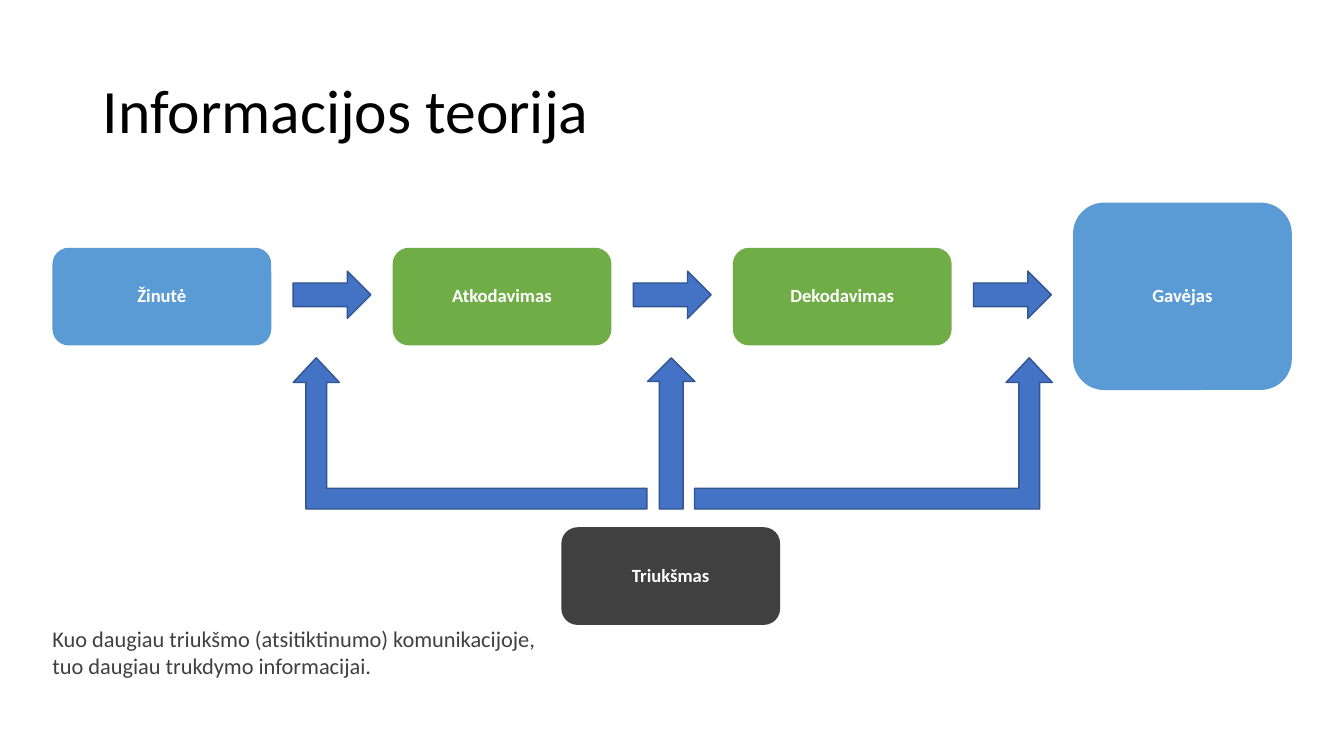
from pptx import Presentation
from pptx.dml.color import RGBColor
from pptx.enum.shapes import MSO_SHAPE
from pptx.enum.text import MSO_ANCHOR, PP_ALIGN
from pptx.util import Pt

ROUNDED = MSO_SHAPE.ROUNDED_RECTANGLE
RIGHT_ARROW = MSO_SHAPE.RIGHT_ARROW
BENT_ARROW = MSO_SHAPE.BENT_UP_ARROW
MIDDLE = MSO_ANCHOR.MIDDLE
CENTER = PP_ALIGN.CENTER

FONT = "Calibri"
BLUE, GREEN, GRAY = "5B9BD5", "70AD47", "404040"
ARROW_FILL, ARROW_LINE = "4472C4", "325491"

# Lengths in points
STEP = 243
BOX_LEFT, BOX_TOP, BOX_WIDTH, BOX_HEIGHT = 37.5, 177, 156.3, 69.8
ARROW_LEFT, ARROW_TOP, ARROW_WIDTH, ARROW_HEIGHT = 209.4, 193.7, 55.6, 33.8
NOISE_TOP, NOISE_HEIGHT = 255.6, 108


def color(code):
    return RGBColor.from_string(code)


def write(shape, text, size, code, bold=False, inset=0, spacing=None):
    frame = shape.text_frame
    frame.word_wrap = True
    frame.margin_left = frame.margin_right = Pt(inset)
    frame.margin_top = frame.margin_bottom = Pt(inset / 2)
    para = frame.paragraphs[0]
    para.text = text
    para.line_spacing = spacing
    para.font.name = FONT
    para.font.size = Pt(size)
    para.font.bold = bold
    para.font.color.rgb = color(code)
    return frame


def add_text(page, text, left, top, width, height, size, code, **style):
    box = page.shapes.add_textbox(Pt(left), Pt(top), Pt(width), Pt(height))
    return write(box, text, size, code, **style)


def add_filled(page, kind, left, top, width, height, fill):
    shape = page.shapes.add_shape(kind, Pt(left), Pt(top), Pt(width), Pt(height))
    shape.shadow.inherit = False
    shape.fill.solid()
    shape.fill.fore_color.rgb = color(fill)
    return shape


def add_box(page, text, left, top, height, fill):
    box = add_filled(page, ROUNDED, left, top, BOX_WIDTH, height, fill)
    box.line.fill.background()
    frame = write(box, text, 13.3, "FFFFFF", bold=True, spacing=0.9)
    frame.vertical_anchor = MIDDLE
    frame.paragraphs[0].alignment = CENTER


def add_arrow(page, kind, left, top, width, height):
    arrow = add_filled(page, kind, left, top, width, height, ARROW_FILL)
    arrow.line.color.rgb = color(ARROW_LINE)
    arrow.line.width = Pt(1)
    return arrow


def add_bent_arrow(page, left, width, flipped=False):
    arrow = add_arrow(page, BENT_ARROW, left, NOISE_TOP, width, NOISE_HEIGHT)
    for index, value in enumerate((0.137, 0.153, 0.163)):
        arrow.adjustments[index] = value
    if flipped:
        arrow._element.spPr.get_or_add_xfrm().set("flipH", "1")


def main():
    deck = Presentation()
    deck.slide_width, deck.slide_height = Pt(960), Pt(540)
    page = deck.slides.add_slide(deck.slide_layouts[6])

    # Title and conclusion
    title = add_text(page, "Informacijos teorija", 66.2, 28.8, 828, 104.4,
                     44, "000000", inset=7.2, spacing=0.9)
    title.vertical_anchor = MIDDLE
    add_text(page, "Kuo daugiau triukšmo (atsitiktinumo) komunikacijoje, "
             "tuo daugiau trukdymo informacijai.",
             37.5, 446.4, 345.6, 58.3, 16, GRAY)

    # Message chain
    chain = [("Žinutė", BLUE), ("Atkodavimas", GREEN), ("Dekodavimas", GREEN)]
    for index, (name, fill) in enumerate(chain):
        shift = index * STEP
        add_box(page, name, BOX_LEFT + shift, BOX_TOP, BOX_HEIGHT, fill)
        add_arrow(page, RIGHT_ARROW, ARROW_LEFT + shift, ARROW_TOP,
                  ARROW_WIDTH, ARROW_HEIGHT)
    add_box(page, "Gavėjas", BOX_LEFT + 3 * STEP, 144.7, 133.9, BLUE)

    # Noise reaching every link
    add_box(page, "Triukšmas", 401, 376.6, BOX_HEIGHT, GRAY)
    add_bent_arrow(page, ARROW_LEFT, 252.7, flipped=True)
    add_bent_arrow(page, 496.1, 255.6)
    upward = add_arrow(page, RIGHT_ARROW, 425.5,
                       NOISE_TOP + (NOISE_HEIGHT - ARROW_HEIGHT) / 2,
                       NOISE_HEIGHT, ARROW_HEIGHT)
    upward.rotation = 270

    deck.save("out.pptx")


if __name__ == "__main__":
    main()
